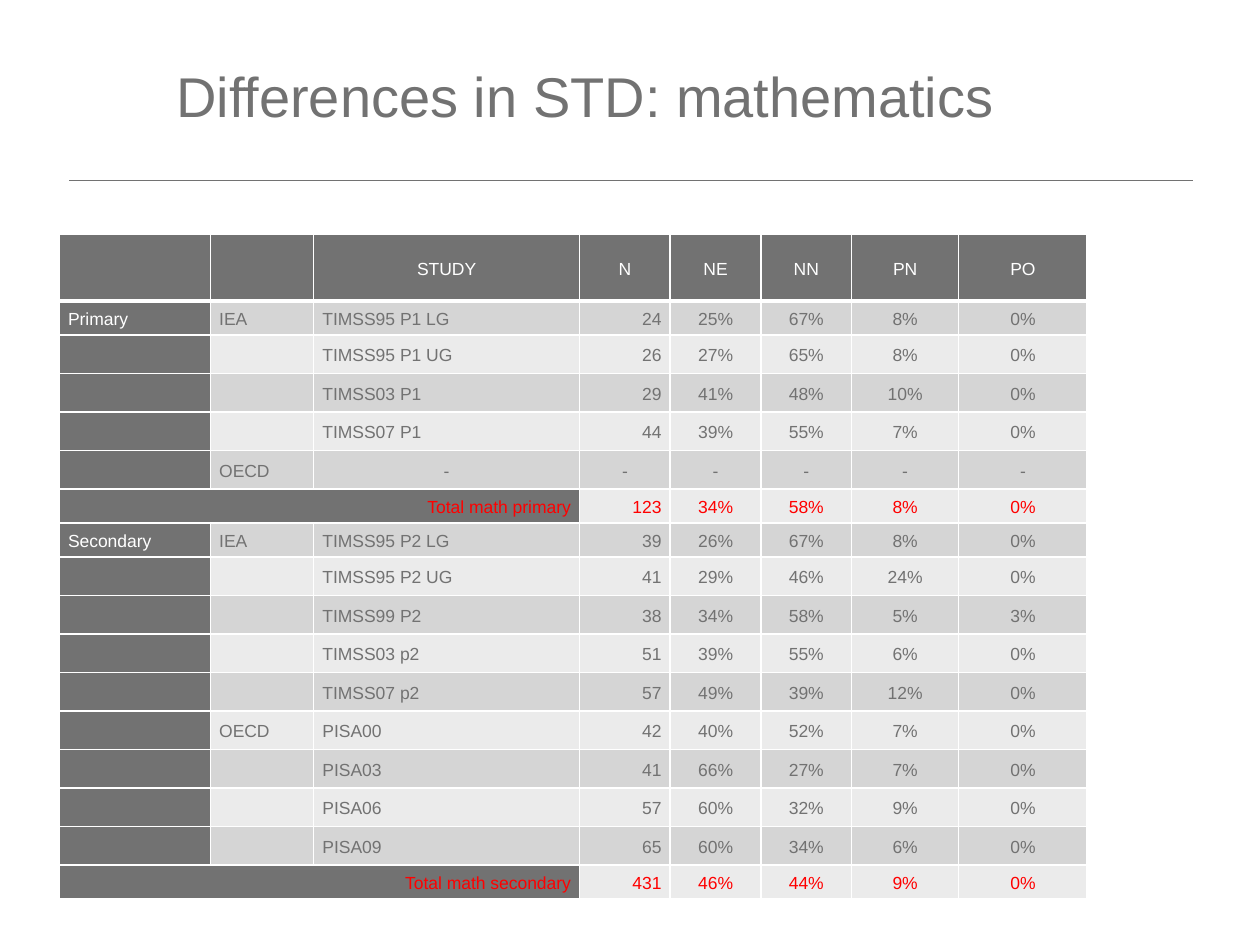
from lxml import etree
from pptx import Presentation
from pptx import util as u
from pptx.dml.color import RGBColor
from pptx.enum import shapes, text
from pptx.oxml import ns

COLORS = {"gray": "727272", "dark_band": "D5D5D5", "light_band": "EBEBEB",
          "white": "FFFFFF", "red": "FF0000"}
TITLE = "Differences in STD: mathematics"
ROWS = [
    ("", "", "STUDY", "N", "NE", "NN", "PN", "PO"),
    ("Primary", "IEA", "TIMSS95 P1 LG", "24", "25%", "67%", "8%", "0%"),
    ("", "", "TIMSS95 P1 UG", "26", "27%", "65%", "8%", "0%"),
    ("", "", "TIMSS03 P1", "29", "41%", "48%", "10%", "0%"),
    ("", "", "TIMSS07 P1", "44", "39%", "55%", "7%", "0%"),
    ("", "OECD", "-", "-", "-", "-", "-", "-"),
    ("Total math primary", "", "", "123", "34%", "58%", "8%", "0%"),
    ("Secondary", "IEA", "TIMSS95 P2 LG", "39", "26%", "67%", "8%", "0%"),
    ("", "", "TIMSS95 P2 UG", "41", "29%", "46%", "24%", "0%"),
    ("", "", "TIMSS99 P2", "38", "34%", "58%", "5%", "3%"),
    ("", "", "TIMSS03 p2", "51", "39%", "55%", "6%", "0%"),
    ("", "", "TIMSS07 p2", "57", "49%", "39%", "12%", "0%"),
    ("", "OECD", "PISA00", "42", "40%", "52%", "7%", "0%"),
    ("", "", "PISA03", "41", "66%", "27%", "7%", "0%"),
    ("", "", "PISA06", "57", "60%", "32%", "9%", "0%"),
    ("", "", "PISA09", "65", "60%", "34%", "6%", "0%"),
    ("Total math secondary", "", "", "431", "46%", "44%", "9%", "0%"),
]
COLUMN_WIDTHS = [1.2, 0.82, 2.11, 0.72, 0.72, 0.72, 0.85, 1.02]
TABLE_LEFT, TABLE_TOP, TABLE_HEIGHT = 0.47, 1.86, 5.12
HEADER_HEIGHT, GROUP_HEIGHT = 0.53, 0.27
CELL_FORMAT = {"margin_left": u.Inches(0.07), "margin_right": u.Inches(0.07),
               "margin_top": 0, "margin_bottom": 0,
               "vertical_anchor": text.MSO_ANCHOR.MIDDLE}
ALIGN = text.PP_ALIGN


def rgb(name):
    return RGBColor.from_string(COLORS[name])


def apply_format(target, values):
    for name, value in values.items():
        setattr(target, name, value)


def write(paragraph, words, size, color):
    span = paragraph.add_run()
    span.text = words
    apply_format(span.font, {"name": "Arial", "size": u.Pt(size)})
    span.font.color.rgb = rgb(color)


def set_borders(cell, bottom):
    properties = cell._tc.get_or_add_tcPr()
    for side, points in (("L", 1), ("R", 1), ("T", 1), ("B", bottom)):
        line = etree.SubElement(properties, ns.qn(f"a:ln{side}"), w=str(u.Pt(points)))
        fill = etree.SubElement(line, ns.qn("a:solidFill"))
        etree.SubElement(fill, ns.qn("a:srgbClr"), val=COLORS["white"])


def cell_alignment(row, column, words):
    if row == 0 or words == "-" or column > 3:
        return ALIGN.CENTER
    if column == 3 or words.startswith("Total"):
        return ALIGN.RIGHT
    return ALIGN.LEFT


def add_title(page):
    box = page.shapes.add_textbox(u.Inches(1.3), u.Inches(0.36), u.Inches(8.19), u.Inches(0.79))
    apply_format(box.text_frame, {"word_wrap": True,
                                  "vertical_anchor": text.MSO_ANCHOR.MIDDLE})
    write(box.text_frame.paragraphs[0], TITLE, 32, "gray")


def add_rule(page):
    rule = page.shapes.add_connector(shapes.MSO_CONNECTOR.STRAIGHT, u.Inches(0.55),
                                     u.Inches(1.43), u.Inches(9.47), u.Inches(1.43))
    rule.line.color.rgb = rgb("gray")
    rule.line.width = u.Pt(0.5)
    etree.SubElement(rule._element.spPr, ns.qn("a:effectLst"))


def add_study_table(page):
    table = page.shapes.add_table(
        len(ROWS), len(COLUMN_WIDTHS), u.Inches(TABLE_LEFT), u.Inches(TABLE_TOP),
        u.Inches(sum(COLUMN_WIDTHS)), u.Inches(TABLE_HEIGHT)).table
    apply_format(table, {"first_row": False, "horz_banding": False})
    for column, width in zip(table.columns, COLUMN_WIDTHS):
        column.width = u.Inches(width)

    group_rows = sum(bool(row[0]) for row in ROWS)
    study_height = ((TABLE_HEIGHT - HEADER_HEIGHT - group_rows * GROUP_HEIGHT)
                    / (len(ROWS) - 1 - group_rows))
    for r, values in enumerate(ROWS):
        height = HEADER_HEIGHT if r == 0 else GROUP_HEIGHT if values[0] else study_height
        table.rows[r].height = u.Inches(height)
        is_total = values[0].startswith("Total")
        band = "dark_band" if r % 2 else "light_band"
        for c, words in enumerate(values):
            cell = table.cell(r, c)
            shaded = r == 0 or c == 0
            apply_format(cell, CELL_FORMAT)
            set_borders(cell, 3 if r == 0 else 1)
            cell.fill.solid()
            cell.fill.fore_color.rgb = rgb("gray" if shaded else band)
            if words:
                para = cell.text_frame.paragraphs[0]
                apply_format(para, {"alignment": cell_alignment(r, c, words),
                                    "line_spacing": 1.15})
                write(para, words, 10, "red" if is_total else "white" if shaded else "gray")
        if is_total:
            table.cell(r, 0).merge(table.cell(r, 2))


def main():
    deck = Presentation()
    apply_format(deck, {"slide_width": u.Inches(10), "slide_height": u.Inches(7.5)})
    page = deck.slides.add_slide(deck.slide_layouts[6])
    add_rule(page)
    add_study_table(page)
    add_title(page)
    deck.save("out.pptx")


if __name__ == "__main__":
    main()
